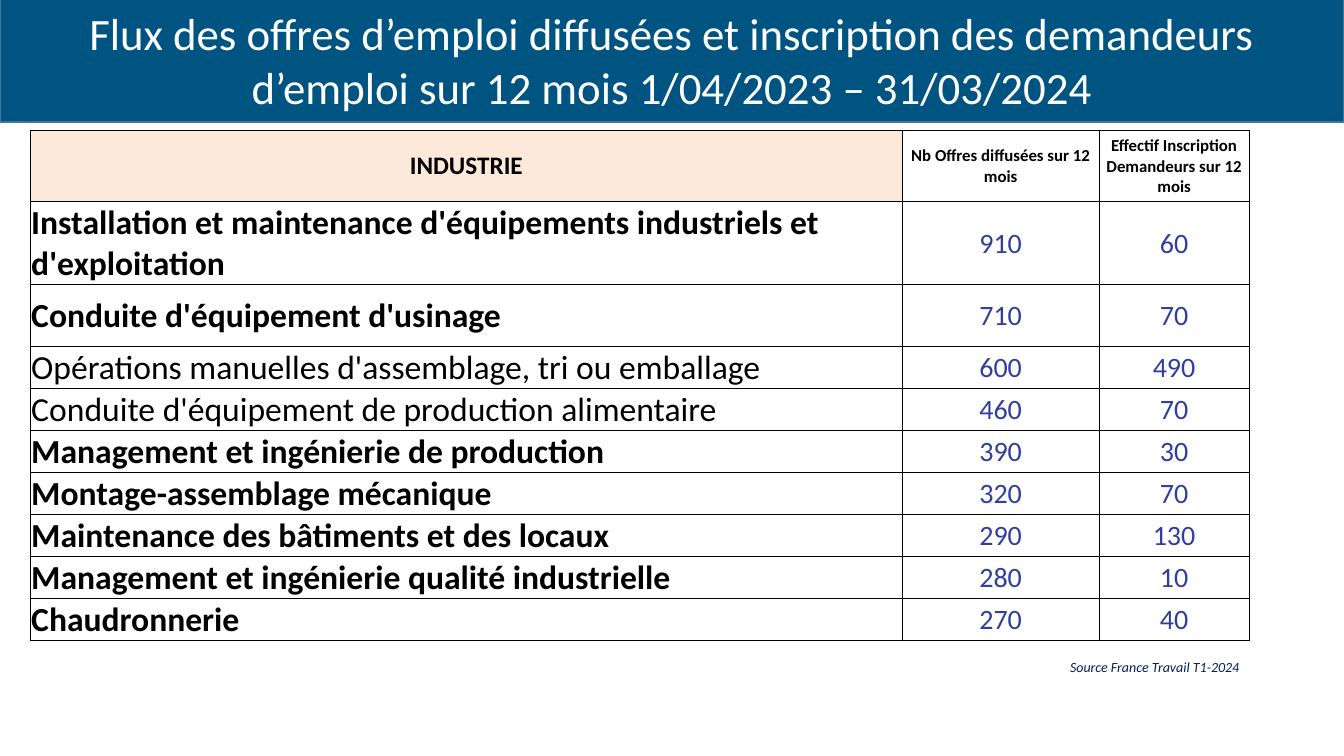
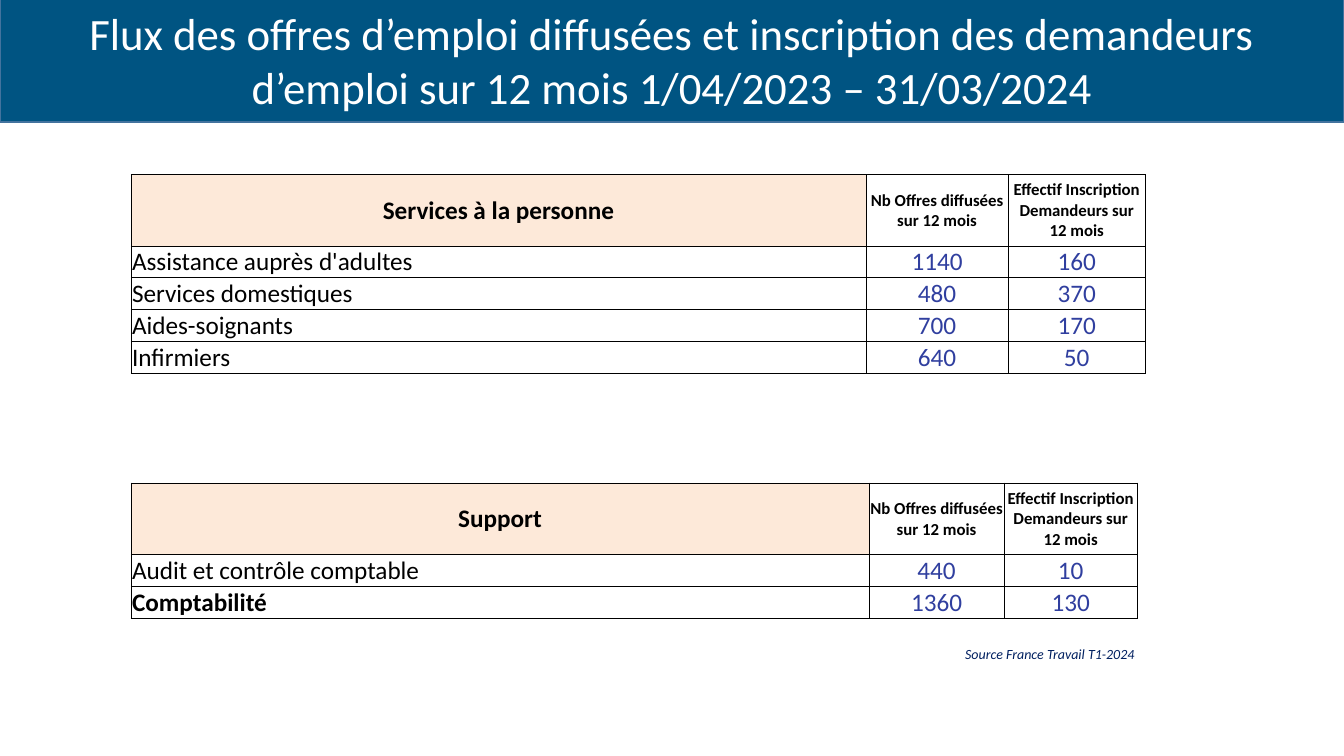
from lxml.etree import SubElement
from pptx import Presentation
from pptx.dml.color import RGBColor
from pptx.enum.text import MSO_ANCHOR as Anchor, MSO_AUTO_SIZE as AutoSize, PP_ALIGN as Align
from pptx.oxml.ns import qn
from pptx.util import Inches, Pt

COLORS = {
    "band": "005482",
    "band_line": "43739E",
    "title": "FFFFFF",
    "heading_fill": "FDE9D9",
    "text": "000000",
    "figure": "303F9F",
    "source": "002060",
}
FONT = "Calibri"
TITLE = (
    "Flux des offres d’emploi diffusées et inscription des demandeurs "
    "d’emploi sur 12 mois 1/04/2023 – 31/03/2024"
)
SOURCE = "Source France Travail T1-2024"
FIGURE_HEADINGS = ("Nb Offres diffusées sur 12 mois", "Effectif Inscription Demandeurs sur 12 mois")
HEADING_HEIGHT = 0.71

INDUSTRY = [
    ("Installation et maintenance d'équipements industriels et d'exploitation", 910, 60, True),
    ("Conduite d'équipement d'usinage", 710, 70, True),
    ("Opérations manuelles d'assemblage, tri ou emballage", 600, 490, False),
    ("Conduite d'équipement de production alimentaire", 460, 70, False),
    ("Management et ingénierie de production", 390, 30, True),
    ("Montage-assemblage mécanique", 320, 70, True),
    ("Maintenance des bâtiments et des locaux", 290, 130, True),
    ("Management et ingénierie qualité industrielle", 280, 10, True),
    ("Chaudronnerie", 270, 40, True),
]
CARE = [
    ("Assistance auprès d'adultes", 1140, 160, False),
    ("Services domestiques", 480, 370, False),
    ("Aides-soignants", 700, 170, False),
    ("Infirmiers", 640, 50, False),
]
SUPPORT = [
    ("Audit et contrôle comptable", 440, 10, False),
    ("Comptabilité", 1360, 130, True),
]


def rgb(name):
    return RGBColor.from_string(COLORS[name])


def write(frame, text, size, color, align, bold=False, italic=False):
    paragraph = frame.paragraphs[0]
    paragraph.alignment = align
    run = paragraph.add_run()
    run.text = text
    font = run.font
    font.name, font.size, font.bold, font.italic = FONT, Pt(size), bold, italic
    font.color.rgb = rgb(color)


def add_title_slide(deck):
    slide = deck.slides.add_slide(deck.slide_layouts.get_by_name("Title Only"))
    band = slide.shapes.title
    band.left, band.top = Inches(0), Inches(-0.03)
    band.width, band.height = deck.slide_width, Inches(1.24)
    band.fill.solid()
    band.fill.fore_color.rgb = rgb("band")
    band.line.color.rgb = rgb("band_line")
    band.line.width = Pt(1)
    band.text_frame.auto_size = AutoSize.NONE
    band.text_frame.vertical_anchor = Anchor.MIDDLE
    write(band.text_frame, TITLE, 32, "title", Align.CENTER)
    return slide


def add_source(slide, left, top):
    credit = slide.shapes.add_textbox(Inches(left), Inches(top), Inches(2.4), Inches(0.27))
    credit.text_frame.word_wrap = True
    write(credit.text_frame, SOURCE, 10, "source", Align.RIGHT, italic=True)


def add_borders(cell):
    properties = cell._tc.get_or_add_tcPr()
    for side in ("a:lnL", "a:lnR", "a:lnT", "a:lnB"):
        border = SubElement(properties, qn(side), w=str(Pt(0.5)))
        fill = SubElement(border, qn("a:solidFill"))
        SubElement(fill, qn("a:srgbClr"), val=COLORS["text"])


def fill_cell(cell, text, size, color="text", align=Align.CENTER, bold=False, fill=None):
    add_borders(cell)
    if fill:
        cell.fill.solid()
        cell.fill.fore_color.rgb = rgb(fill)
    else:
        cell.fill.background()
    cell.margin_left = cell.margin_right = cell.margin_top = Inches(0.01)
    cell.margin_bottom = 0
    cell.vertical_anchor = Anchor.MIDDLE
    write(cell.text_frame, text, size, color, align, bold)


def add_jobs_table(slide, left, top, widths, heading, jobs, heights, job_size, figure_size):
    heights = [HEADING_HEIGHT, *heights]
    table = slide.shapes.add_table(
        len(heights), len(widths), Inches(left), Inches(top),
        Inches(sum(widths)), Inches(sum(heights)),
    ).table
    table.first_row = table.horz_banding = False
    for column, width in zip(table.columns, widths):
        column.width = Inches(width)
    for row, height in zip(table.rows, heights):
        row.height = Inches(height)

    fill_cell(table.cell(0, 0), heading, 18, bold=True, fill="heading_fill")
    for column, label in enumerate(FIGURE_HEADINGS, 1):
        fill_cell(table.cell(0, column), label, 12, bold=True)
    for row, (job, offers, seekers, bold) in enumerate(jobs, 1):
        fill_cell(table.cell(row, 0), job, job_size, align=Align.LEFT, bold=bold)
        for column, figure in enumerate((offers, seekers), 1):
            fill_cell(table.cell(row, column), str(figure), figure_size, "figure")


def main():
    deck = Presentation()
    deck.slide_width, deck.slide_height = Inches(13.33), Inches(7.5)

    industry = add_title_slide(deck)
    add_jobs_table(industry, 0.3, 1.29, (8.65, 1.95, 1.49), "INDUSTRIE", INDUSTRY,
                   [0.82, 0.61] + [0.41] * 7, 24, 20)
    add_source(industry, 9.99, 6.48)

    services = add_title_slide(deck)
    for top, widths, heading, jobs in (
        (1.73, (7.29, 1.41, 1.36), "Services à la personne", CARE),
        (4.79, (7.32, 1.34, 1.32), "Support", SUPPORT),
    ):
        add_jobs_table(services, 1.3, top, widths, heading, jobs, [0.31] * len(jobs), 18, 18)
    add_source(services, 8.95, 6.35)

    deck.save("out.pptx")


if __name__ == "__main__":
    main()
